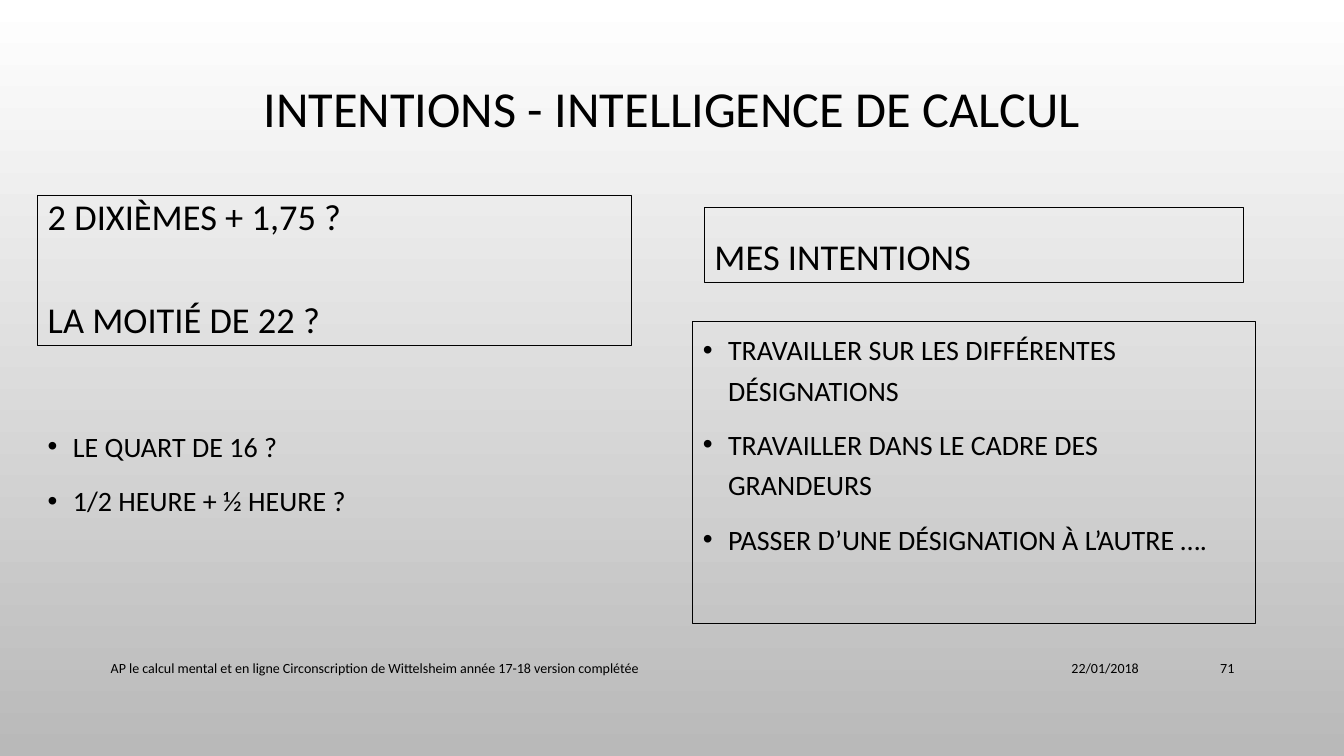
"""Build the slide on intentions and calculation skills."""
from lxml import etree
from pptx import Presentation
from pptx.dml.color import RGBColor
from pptx.enum.shapes import MSO_SHAPE
from pptx.enum.text import MSO_ANCHOR, PP_ALIGN
from pptx.oxml.ns import qn
from pptx.util import Pt

PX = 9525
BLACK = RGBColor(0x00, 0x00, 0x00)
WHITE = RGBColor(0xFF, 0xFF, 0xFF)
GREY = RGBColor(0xB9, 0xB9, 0xB9)
LEFT, CENTER, RIGHT = PP_ALIGN.LEFT, PP_ALIGN.CENTER, PP_ALIGN.RIGHT
TOP, MIDDLE, BOTTOM = MSO_ANCHOR.TOP, MSO_ANCHOR.MIDDLE, MSO_ANCHOR.BOTTOM
RECTANGLE = MSO_SHAPE.RECTANGLE
INDENT = 24


def write(sp, lines, size, align=LEFT, anchor=MIDDLE, spacing=1.0, before=0, bullet=False):
    tf = sp.text_frame
    tf.word_wrap = True
    tf.vertical_anchor = anchor
    for i, line in enumerate(lines):
        p = tf.paragraphs[0] if i == 0 else tf.add_paragraph()
        if bullet:
            pPr = p._p.get_or_add_pPr()
            pPr.set("marL", str(INDENT * PX))
            pPr.set("indent", str(-INDENT * PX))
            etree.SubElement(pPr, qn("a:buFont")).set("typeface", "Arial")
            etree.SubElement(pPr, qn("a:buChar")).set("char", "•")
        p.alignment = align
        p.line_spacing = spacing
        p.space_before = Pt(before if i else 0)
        r = p.add_run()
        r.text = line
        r.font.name = "Calibri"
        r.font.size = Pt(size)
        r.font.color.rgb = BLACK


prs = Presentation()
prs.slide_width, prs.slide_height = 1280 * PX, 720 * PX
s = prs.slides.add_slide(prs.slide_layouts[5])

fill = s.background.fill
fill.gradient()
fill.gradient_angle = 270
for stop, color, position in zip(fill.gradient_stops, (WHITE, GREY), (0, 1)):
    stop.color.rgb = color
    stop.position = position

title = s.shapes.title
title.left, title.top, title.width, title.height = [v * PX for v in (96, 65, 1088, 82)]
write(title, ["INTENTIONS - INTELLIGENCE DE CALCUL"], 36, align=CENTER, spacing=0.9)

heading = dict(size=26, anchor=BOTTOM, spacing=0.85, before=47)
bullets = dict(size=20, anchor=TOP, spacing=1.2, before=10, bullet=True)
framed = [
    ((36, 186, 565, 143), ["2 DIXIÈMES + 1,75 ?", "LA MOITIÉ DE 22 ?"], heading),
    ((671, 198, 513, 71), ["MES INTENTIONS"], heading),
    ((660, 306, 536, 288), ["TRAVAILLER SUR LES DIFFÉRENTES DÉSIGNATIONS",
                            "TRAVAILLER DANS LE CADRE DES GRANDEURS",
                            "PASSER D’UNE DÉSIGNATION À L’AUTRE …."], bullets),
]
for box, lines, style in framed:
    sp = s.shapes.add_shape(RECTANGLE, *[v * PX for v in box])
    sp.shadow.inherit = False
    sp.fill.background()
    sp.line.color.rgb = BLACK
    sp.line.width = Pt(0.75)
    write(sp, lines, **style)

plain = [
    ((36, 398, 595, 209), ["LE QUART DE 16 ?", "1/2 HEURE + ½ HEURE ?"], bullets),
    ((96, 617, 701, 38), ["AP le calcul mental et en ligne Circonscription de Wittelsheim "
                          "année 17-18 version complétée"], dict(size=10)),
    ((806, 617, 288, 38), ["22/01/2018"], dict(size=10, align=RIGHT)),
    ((1104, 617, 81, 38), ["71"], dict(size=10, align=RIGHT)),
]
for box, lines, style in plain:
    write(s.shapes.add_textbox(*[v * PX for v in box]), lines, **style)

prs.save("out.pptx")
